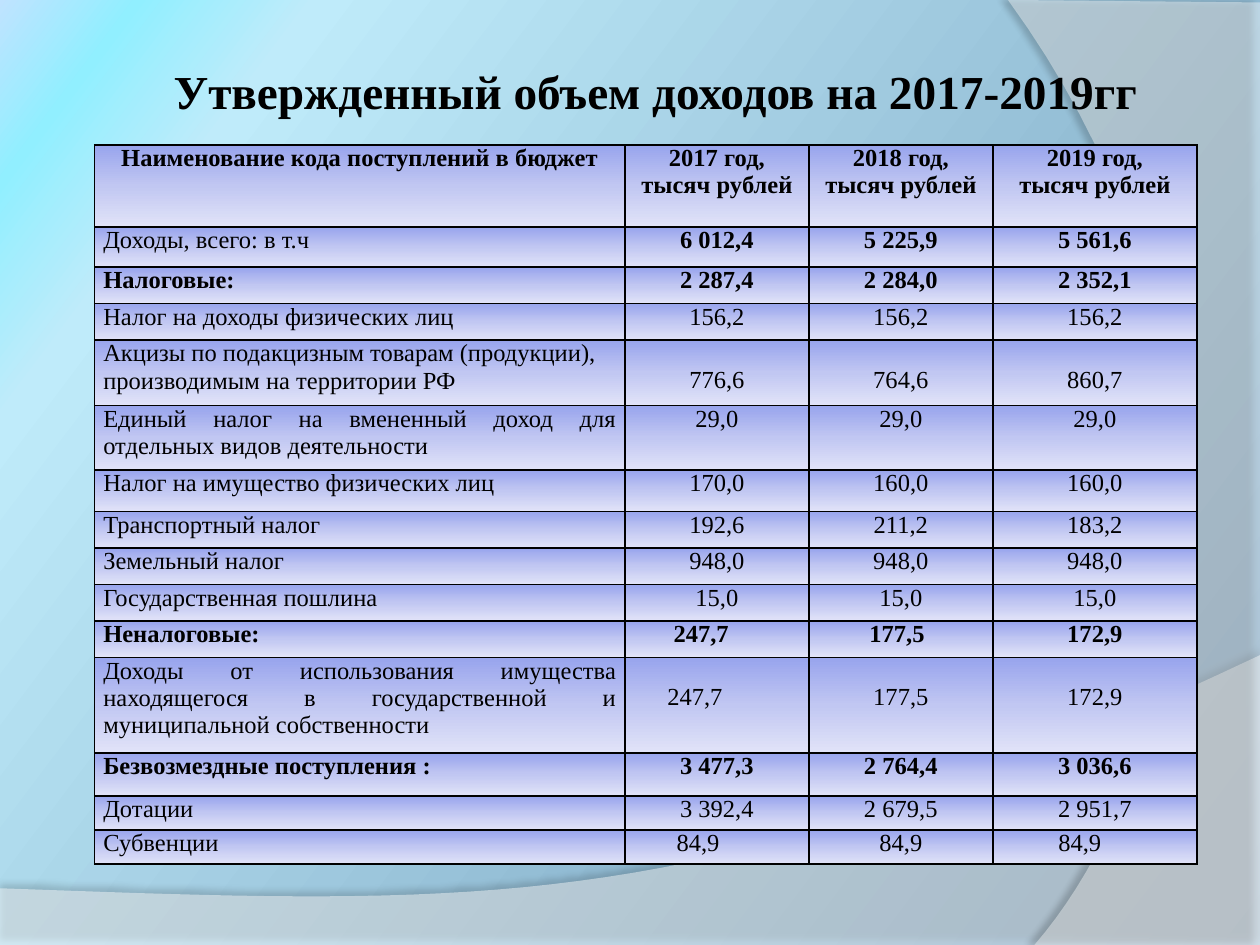
from lxml.etree import SubElement
from pptx import Presentation
from pptx.dml.color import RGBColor
from pptx.enum.text import MSO_ANCHOR, PP_ALIGN as Align
from pptx.oxml import parse_xml
from pptx.oxml.ns import nsdecls, qn
from pptx.util import Inches, Pt

FONT = "Times New Roman"
TITLE = "Утвержденный объем доходов на 2017-2019гг"
BACKGROUND = [(0, "6D95B4"), (84, "BFEBFA"), (93, "91EFFF"), (100, "BFE3FF")]
CELL_GRADIENT = [(0, "98A4ED"), (50, "C1C7F2"), (100, "E1E3F8")]
COLUMN_WIDTHS = [4.21, 1.46, 1.46, 1.62]
ROWS = [
    (0.65, "Наименование кода поступлений в бюджет", "2017 год,\nтысяч рублей",
     "2018 год,\nтысяч рублей", "2019 год,\nтысяч рублей"),
    (0.32, "Доходы, всего: в т.ч", "6 012,4", "5 225,9", "5 561,6"),
    (0.29, "Налоговые:", "2 287,4", "2 284,0", "2 352,1"),
    (0.29, "Налог на доходы физических лиц", "156,2", "156,2", "156,2"),
    (0.52, "Акцизы по подакцизным товарам (продукции), производимым на территории РФ",
     "776,6", "764,6", "860,7"),
    (0.51, "Единый налог на вмененный доход для отдельных видов деятельности",
     "29,0", "29,0", "29,0"),
    (0.33, "Налог на имущество физических лиц", "170,0", "160,0", "160,0"),
    (0.29, "Транспортный налог", "192,6", "211,2", "183,2"),
    (0.29, "Земельный налог", "948,0", "948,0", "948,0"),
    (0.29, "Государственная пошлина", "15,0", "15,0", "15,0"),
    (0.29, "Неналоговые:", "247,7", "177,5", "172,9"),
    (0.76, "Доходы от использования имущества находящегося в государственной "
     "и муниципальной собственности", "247,7", "177,5", "172,9"),
    (0.34, "Безвозмездные поступления :", "3 477,3", "2 764,4", "3 036,6"),
    (0.27, "Дотации", "3 392,4", "2 679,5", "2 951,7"),
    (0.27, "Субвенции", "84,9", "84,9", "84,9"),
]
TOTAL_ROW, EXCISE_ROW, PROPERTY_ROW = 1, 4, 11
BOLD_ROWS = {0, 2, 10, 12}
EXTRA_RIGHT_MARGIN = {(10, 1): 0.25, (10, 2): 0.06, (11, 1): 0.35, (14, 1): 0.3, (14, 3): 0.24}
WAVES = [
    {"start": (0, 7.05), "lines": [(0, 7.5), (10, 7.5), (10, 5.2)],
     "curve": [(5.59, 7.29), (3.91, 7.19), (0, 7.05)],
     "opacity": 45, "shadow": (35, 4, 3.5, 270)},
    {"start": (10, 0.02), "lines": [(10, 7.5), (8.21, 7.5)],
     "curve": [(9.35, 6.19), (10.18, 3), (8, 0)],
     "opacity": 40, "shadow": (45, 4, 4, 180)},
]


def color(value):
    return RGBColor.from_string(value)


def set_gradient(fill, owner, stops, angle):
    fill.solid()
    solid = owner.find(".//" + qn("a:solidFill"))
    stop_xml = "".join(f'<a:gs pos="{position * 1000}"><a:srgbClr val="{value}"/></a:gs>'
                       for position, value in stops)
    solid.getparent().replace(solid, parse_xml(
        f'<a:gradFill {nsdecls("a")} rotWithShape="1"><a:gsLst>{stop_xml}</a:gsLst>'
        f'<a:lin ang="{angle * 60000}" scaled="0"/></a:gradFill>'))


def set_borders(cell_properties):
    for index, side in enumerate(("lnL", "lnR", "lnT", "lnB")):
        cell_properties.insert(index, parse_xml(
            f'<a:{side} {nsdecls("a")} w="{Pt(1)}"><a:solidFill>'
            f'<a:srgbClr val="000000"/></a:solidFill></a:{side}>'))


def write_text(text_frame, text, size, bold, alignment):
    text_frame.text = text
    for paragraph in text_frame.paragraphs:
        paragraph.alignment = alignment
        for run in paragraph.runs:
            run.font.name, run.font.size, run.font.bold = FONT, Pt(size), bold
            run.font.color.rgb = color("000000")


def bezier_points(points, steps=40):
    for step in range(1, steps + 1):
        t = step / steps
        weights = ((1 - t) ** 3, 3 * t * (1 - t) ** 2, 3 * t * t * (1 - t), t ** 3)
        yield tuple(sum(w * point[axis] for w, point in zip(weights, points)) for axis in (0, 1))


def add_wave(slide, wave):
    curve = bezier_points([wave["lines"][-1], *wave["curve"]])
    builder = slide.shapes.build_freeform(*map(Inches, wave["start"]))
    builder.add_line_segments([tuple(map(Inches, point)) for point in [*wave["lines"], *curve]])
    shape = builder.convert_to_shape()
    shape.fill.solid()
    shape.fill.fore_color.rgb = color("FFFFFF")
    shape.line.fill.background()
    shape.shadow.inherit = False
    white = shape.element.spPr.find(".//" + qn("a:srgbClr"))
    SubElement(white, qn("a:alpha"), val=str(wave["opacity"] * 1000))
    opacity, blur, distance, direction = wave["shadow"]
    shape.element.spPr.find(qn("a:effectLst")).append(parse_xml(
        f'<a:outerShdw {nsdecls("a")} blurRad="{Pt(blur)}" dist="{Pt(distance)}" '
        f'dir="{direction * 60000}" algn="ctr" rotWithShape="0"><a:srgbClr val="000000">'
        f'<a:alpha val="{opacity * 1000}"/></a:srgbClr></a:outerShdw>'))


def add_title(slide):
    frame = slide.shapes.add_textbox(*map(Inches, (1.06, 0.44, 8.28, 0.55))).text_frame
    frame.word_wrap = True
    frame.vertical_anchor = MSO_ANCHOR.MIDDLE
    frame.margin_left = frame.margin_right = Inches(0.05)
    frame.margin_top = frame.margin_bottom = Inches(0.05)
    write_text(frame, TITLE, 27, True, Align.CENTER)


def fill_cell(cell, text, row, column):
    cell.margin_left = Inches(0.07)
    cell.margin_right = Inches(0.07 + EXTRA_RIGHT_MARGIN.get((row, column), 0))
    second_line = column > 0 and row in (EXCISE_ROW, PROPERTY_ROW)
    cell.margin_top = Inches(0.21 if second_line else 0)
    cell.margin_bottom = 0
    if row == 0 or column > 0:
        alignment = Align.CENTER
    else:
        alignment = Align.LEFT if row == EXCISE_ROW else Align.JUSTIFY
    bold = row in BOLD_ROWS or (row == TOTAL_ROW and column > 0)
    write_text(cell.text_frame, text, 14, bold, alignment)
    cell_properties = cell._tc.get_or_add_tcPr()
    set_gradient(cell.fill, cell_properties, CELL_GRADIENT, 90)
    set_borders(cell_properties)


def add_income_table(slide):
    size = sum(COLUMN_WIDTHS), sum(row[0] for row in ROWS)
    table = slide.shapes.add_table(len(ROWS), len(COLUMN_WIDTHS),
                                   *map(Inches, (0.75, 1.15, *size))).table
    table.first_row = table.horz_banding = False
    for column, width in zip(table.columns, COLUMN_WIDTHS):
        column.width = Inches(width)
    for row, (height, *texts) in enumerate(ROWS):
        table.rows[row].height = Inches(height)
        for column, text in enumerate(texts):
            fill_cell(table.cell(row, column), text, row, column)


def main():
    """Build the slide with the approved income table for 2017-2019."""
    presentation = Presentation()
    presentation.slide_width, presentation.slide_height = Inches(10), Inches(7.5)
    slide = presentation.slides.add_slide(presentation.slide_layouts[6])
    set_gradient(slide.background.fill, slide.element, BACKGROUND, 217)
    for wave in WAVES:
        add_wave(slide, wave)
    add_title(slide)
    add_income_table(slide)
    presentation.save("out.pptx")


if __name__ == "__main__":
    main()
